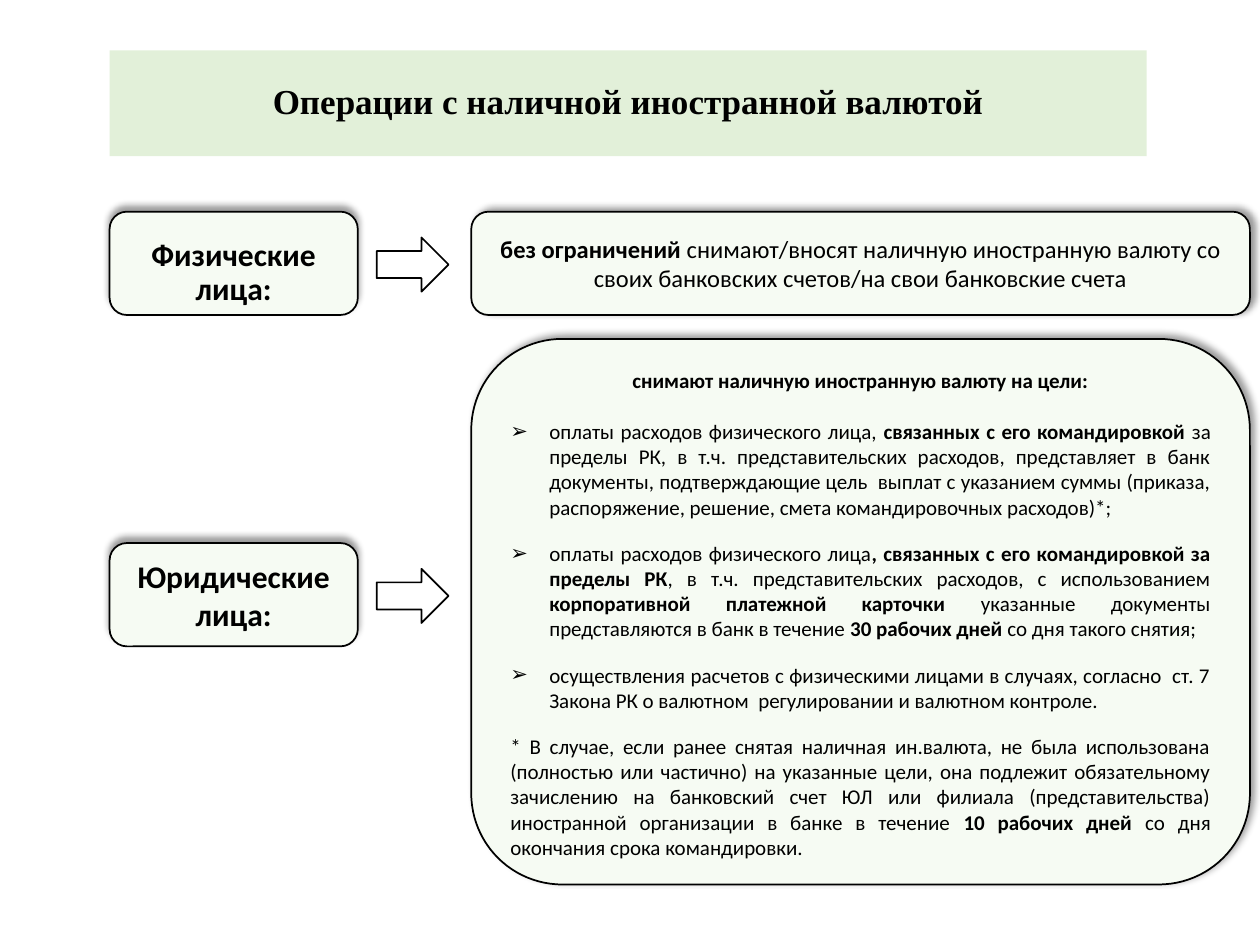
from dataclasses import dataclass

from lxml.etree import SubElement
from pptx import Presentation
from pptx.dml.color import RGBColor
from pptx.enum.shapes import MSO_SHAPE as Shape
from pptx.enum.text import MSO_ANCHOR as Anchor, MSO_AUTO_SIZE as AutoSize, PP_ALIGN as Align
from pptx.oxml.ns import qn
from pptx.util import Inches, Pt


@dataclass(frozen=True)
class Theme:
    ink: RGBColor = RGBColor(0, 0, 0)
    paper: RGBColor = RGBColor(255, 255, 255)
    banner: RGBColor = RGBColor.from_string("E2F0D9")
    panel: RGBColor = RGBColor.from_string("F6FBF3")
    title_font: str = "Times New Roman"
    text_font: str = "Calibri"
    title_size: int = 20
    label_size: int = 18
    lead_size: int = 14
    list_size: int = 12


THEME = Theme()

# Each paragraph is a list of (text, bold) runs.
TITLE = [("Операции c наличной иностранной валютой", True)]
INDIVIDUALS = [("Физические лица:", True)]
COMPANIES = [("Юридические лица:", True)]
INDIVIDUALS_RULE = [
    ("без ограничений ", True),
    ("снимают/вносят наличную иностранную валюту со своих банковских счетов/"
     "на свои банковские счета", False),
]
PURPOSES_HEADING = [("снимают наличную иностранную валюту на цели:", True)]
PURPOSES = [
    [("оплаты расходов физического лица, ", False),
     ("связанных с его командировкой ", True),
     ("за пределы РК, в т.ч. представительских расходов, представляет в банк "
      "документы, подтверждающие цель  выплат с указанием суммы (приказа, "
      "распоряжение, решение, смета командировочных расходов)*;", False)],
    [("оплаты расходов физического лица", False),
     (", связанных с его командировкой за пределы РК", True),
     (", в т.ч. представительских расходов, с использованием ", False),
     ("корпоративной платежной карточки ", True),
     ("указанные документы представляются в банк в течение ", False),
     ("30 рабочих дней ", True),
     ("со дня такого снятия;", False)],
    [("осуществления расчетов с физическими лицами в случаях, согласно  ст. 7 "
      "Закона РК о валютном  регулировании и валютном контроле.", False)],
]
FOOTNOTE = [
    ("* В случае, если ранее снятая наличная ин.валюта, не была использована "
     "(полностью или частично) на указанные цели, она подлежит обязательному "
     "зачислению на банковский счет ЮЛ или филиала (представительства) "
     "иностранной организации в банке в течение ", False),
    ("10 рабочих дней ", True),
    ("со дня окончания срока командировки.", False),
]

# Grid in inches: a label column, an arrow column and a rule column.
LABEL_X, LABEL_W = 0.87, 1.97
ARROW_X, ARROW_W, ARROW_H = 2.99, 0.57, 0.43
RULE_X, RULE_W = 3.74, 6.18
ROW_H = 0.82
INDIVIDUALS_Y, COMPANIES_Y = 1.68, 4.31
PURPOSES_Y, PURPOSES_H = 2.69, 4.33
TEXT_PAD_X, TEXT_PAD_Y = 0.31, 0.23
BULLET_INDENT = 0.31
UP, UP_RIGHT = 270, 315


def apply(target, **values):
    for name, value in values.items():
        setattr(target, name, value)


def place(shape, left, top, width, height):
    apply(shape, left=Inches(left), top=Inches(top),
          width=Inches(width), height=Inches(height))


def prepare(frame, anchor, inset=0.0):
    apply(frame, word_wrap=True, auto_size=AutoSize.NONE, vertical_anchor=anchor)
    apply(frame, margin_left=Inches(inset), margin_right=Inches(inset),
          margin_top=Inches(inset / 2), margin_bottom=Inches(inset / 2))


def set_bullet(paragraph, indent, char=None):
    """Give the paragraph a hanging bullet, or none when char is missing."""
    props = paragraph._p.get_or_add_pPr()
    props.set("marL", str(Inches(indent)))
    props.set("indent", str(-Inches(indent)))
    if char:
        SubElement(props, qn("a:buChar"), char=char)
    else:
        SubElement(props, qn("a:buNone"))


def write(paragraph, runs, size, font=THEME.text_font, align=Align.CENTER,
          spacing=1.0, after=0):
    apply(paragraph, alignment=align, line_spacing=spacing,
          space_before=Pt(0), space_after=Pt(after))
    for text, bold in runs:
        run = paragraph.add_run()
        run.text = text
        apply(run.font, name=font, size=Pt(size), bold=bold)
        run.font.color.rgb = THEME.ink


def add_outlined(slide, kind, box, fill):
    shape = slide.shapes.add_shape(kind, *map(Inches, box))
    shape.shadow.inherit = False
    shape.fill.solid()
    shape.fill.fore_color.rgb = fill
    shape.line.color.rgb = THEME.ink
    shape.line.width = Pt(1)
    return shape


def add_panel(slide, box, shadow_angle):
    panel = add_outlined(slide, Shape.ROUNDED_RECTANGLE, box, THEME.panel)
    effects = panel._element.spPr.find(qn("a:effectLst"))
    shadow = SubElement(effects, qn("a:outerShdw"), blurRad=str(Pt(4)), dist=str(Pt(3)),
                        dir=str(shadow_angle * 60000), algn="b", rotWithShape="0")
    color = SubElement(shadow, qn("a:srgbClr"), val=str(THEME.ink))
    SubElement(color, qn("a:alpha"), val="40000")
    prepare(panel.text_frame, Anchor.MIDDLE, inset=0.1)
    return panel


def add_label_row(slide, runs, top, spacing, drop=0.0):
    """Add a label and its arrow; drop moves the words below the middle."""
    label = add_panel(slide, (LABEL_X, top, LABEL_W, ROW_H), UP)
    label.text_frame.margin_top += Inches(2 * drop)
    write(label.text_frame.paragraphs[0], runs, THEME.label_size, spacing=spacing)
    arrow_y = top + (ROW_H - ARROW_H) / 2 + 0.01
    add_outlined(slide, Shape.RIGHT_ARROW, (ARROW_X, arrow_y, ARROW_W, ARROW_H), THEME.paper)


def fill_title(title):
    place(title, LABEL_X, 0.4, 8.23, 0.84)
    title.fill.solid()
    title.fill.fore_color.rgb = THEME.banner
    prepare(title.text_frame, Anchor.MIDDLE)
    write(title.text_frame.paragraphs[0], TITLE, THEME.title_size,
          font=THEME.title_font, spacing=0.9)


def fill_purposes(body):
    place(body, RULE_X + TEXT_PAD_X, PURPOSES_Y + TEXT_PAD_Y,
          RULE_W - 2 * TEXT_PAD_X, PURPOSES_H - 2 * TEXT_PAD_Y)
    frame = body.text_frame
    prepare(frame, Anchor.TOP)
    heading = frame.paragraphs[0]
    set_bullet(heading, 0)
    write(heading, PURPOSES_HEADING, THEME.list_size, after=14.5)
    for runs in PURPOSES + [FOOTNOTE]:
        paragraph = frame.add_paragraph()
        if runs is FOOTNOTE:
            set_bullet(paragraph, 0)
        else:
            set_bullet(paragraph, BULLET_INDENT, "➢")
        write(paragraph, runs, THEME.list_size, align=Align.JUSTIFY, after=12)


def main():
    deck = Presentation()
    apply(deck, slide_width=Inches(10), slide_height=Inches(7.5))
    slide = deck.slides.add_slide(deck.slide_layouts[1])
    title, body = slide.placeholders

    fill_title(title)
    add_label_row(slide, INDIVIDUALS, INDIVIDUALS_Y, spacing=0.9, drop=0.08)
    add_label_row(slide, COMPANIES, COMPANIES_Y, spacing=1.0)
    rule = add_panel(slide, (RULE_X, INDIVIDUALS_Y, RULE_W, ROW_H), UP_RIGHT)
    write(rule.text_frame.paragraphs[0], INDIVIDUALS_RULE, THEME.lead_size)

    purposes = add_panel(slide, (RULE_X, PURPOSES_Y, RULE_W, PURPOSES_H), UP_RIGHT)
    purposes._element.addnext(body._element)
    fill_purposes(body)
    deck.save("out.pptx")


if __name__ == "__main__":
    main()
